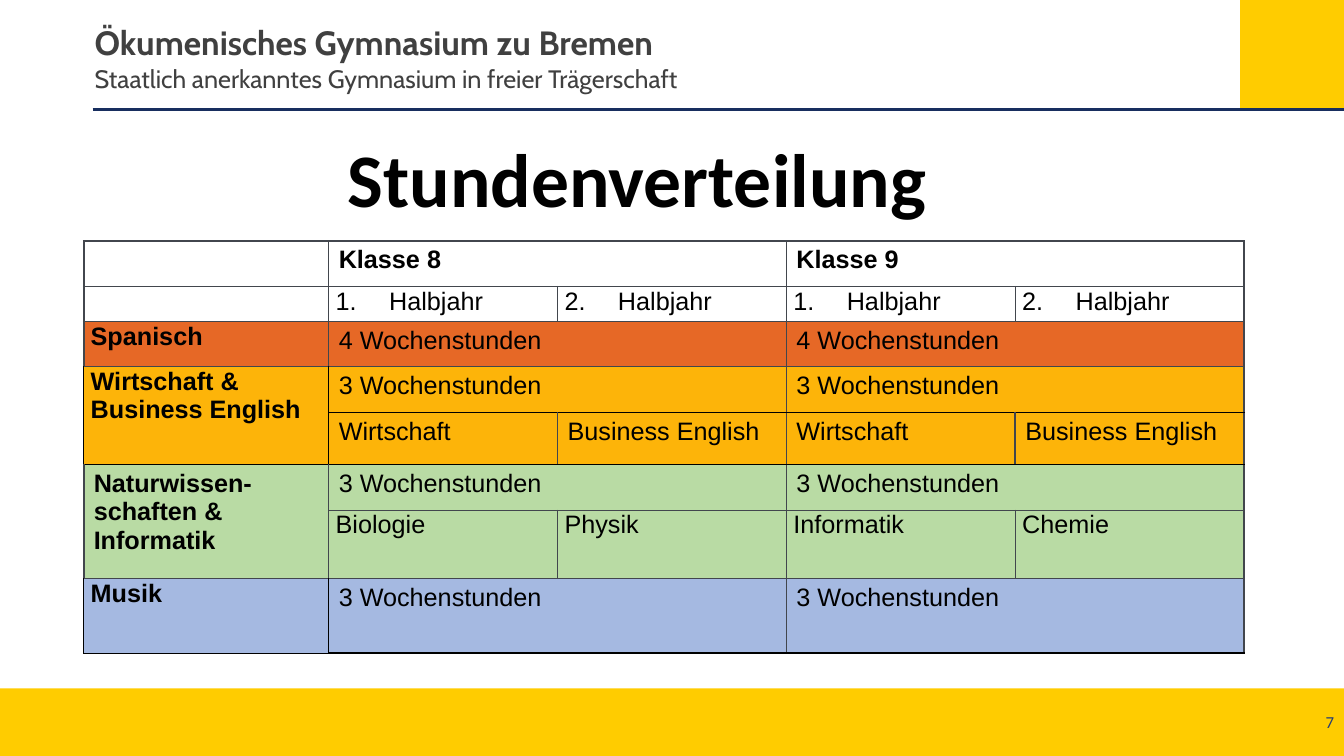
from dataclasses import dataclass
from typing import NamedTuple

from lxml import etree
from pptx import Presentation
from pptx.dml.color import RGBColor
from pptx.enum.shapes import MSO_CONNECTOR, MSO_SHAPE
from pptx.enum.text import MSO_ANCHOR, PP_ALIGN
from pptx.oxml.ns import qn
from pptx.util import Inches, Pt

RECT = MSO_SHAPE.RECTANGLE
LINE = MSO_CONNECTOR.STRAIGHT
TOP, MIDDLE, BOTTOM = MSO_ANCHOR.TOP, MSO_ANCHOR.MIDDLE, MSO_ANCHOR.BOTTOM
LEFT, RIGHT, CENTER = PP_ALIGN.LEFT, PP_ALIGN.RIGHT, PP_ALIGN.CENTER


@dataclass(frozen=True)
class Theme:
    gold: str = "FFCC00"
    navy: str = "182E5F"
    page: str = "253D75"
    head: str = "404040"
    black: str = "000000"
    edge: str = "42464D"
    orange: str = "E66826"
    amber: str = "FDB409"
    green: str = "B9DBA4"
    blue: str = "A5B9E1"
    small: float = 12
    body: float = 18
    school: float = 24
    title: float = 54
    thin: float = 0.75
    thick: float = 1.5
    rule: float = 2.25


THEME = Theme()


class Style(NamedTuple):
    font: str
    size: float
    color: str
    bold: bool = False


class Box(NamedTuple):
    left: float
    top: float
    width: float
    height: float


class Edge(NamedTuple):
    color: str
    width: float


class Row(NamedTuple):
    height: float
    fill: str
    label: str | None
    cells: list[str]
    bold: bool = False
    tight: bool = False
    snug: bool = True


PLAIN = Style("Arial", THEME.body, THEME.black)
STRONG = PLAIN._replace(bold=True)
GRID = Box(0.83, 2.39, 11.51, 4.09)
COLS = [2.43] + [2.27] * 4
TAB = 0.53
THREE = ["3 Wochenstunden"] * 2
ROWS = [
    Row(0.45, "", "", ["Klasse 8", "Klasse 9"], bold=True),
    Row(0.35, "", "", ["1.\tHalbjahr", "2.\tHalbjahr"] * 2, tight=True),
    Row(0.45, THEME.orange, "Spanisch", ["4 Wochenstunden"] * 2),
    Row(0.45, THEME.amber, "Wirtschaft &\nBusiness English", THREE),
    Row(0.52, THEME.amber, None, ["Wirtschaft", "Business English"] * 2),
    Row(0.45, THEME.green, "Naturwissen-schaften & Informatik", THREE, snug=False),
    Row(0.68, THEME.green, None, ["Biologie", "Physik", "Informatik", "Chemie"], tight=True),
    Row(0.74, THEME.blue, "Musik", THREE),
]


def tint(color: str) -> RGBColor:
    return RGBColor.from_string(color)


def write(para, text: str, style: Style) -> None:
    run = para.add_run()
    run.text = text
    run.font.name = style.font
    run.font.size = Pt(style.size)
    run.font.bold = style.bold
    run.font.color.rgb = tint(style.color)


def add_block(slide, box: Box):
    shape = slide.shapes.add_shape(RECT, *map(Inches, box))
    shape.shadow.inherit = False
    shape.fill.solid()
    shape.fill.fore_color.rgb = tint(THEME.gold)
    shape.line.fill.background()
    return shape


def add_text(slide, box: Box, anchor, wrap: bool):
    frame = slide.shapes.add_textbox(*map(Inches, box)).text_frame
    frame.word_wrap = wrap
    frame.vertical_anchor = anchor
    return frame


def add_frame(slide) -> None:
    add_block(slide, Box(12.3, 0, 1.03, 1.09))
    foot = add_block(slide, Box(0, 6.83, 13.33, 0.67)).text_frame
    foot.vertical_anchor = MIDDLE
    foot.paragraphs[0].alignment = RIGHT
    write(foot.paragraphs[0], "7", Style("Calibri", THEME.small, THEME.page))

    rule = slide.shapes.add_connector(
        LINE, Inches(0.92), Inches(1.09), Inches(13.33), Inches(1.09)
    )
    rule.line.color.rgb = tint(THEME.navy)
    rule.line.width = Pt(THEME.rule)
    etree.SubElement(rule._element.spPr, qn("a:effectLst"))

    head = add_text(slide, Box(0.84, 0.35, 6.65, 0.61), TOP, False)
    first, second = head.paragraphs[0], head.add_paragraph()
    first.line_spacing, second.line_spacing = Pt(16), Pt(22)
    write(first, "Ökumenisches Gymnasium zu Bremen",
          Style("Cabin", THEME.school, THEME.head, True))
    write(second, "Staatlich anerkanntes Gymnasium in freier Trägerschaft",
          Style("Cabin", THEME.body, THEME.head))


def add_title(slide) -> None:
    para = add_text(slide, Box(3, 1.25, 6.64, 1.02), BOTTOM, True).paragraphs[0]
    para.alignment = CENTER
    para.line_spacing = 0.9
    para.space_after = Pt(6)
    write(para, "Stundenverteilung", Style("Calibri", THEME.title, THEME.black, True))


def side_edge(row: int, pos: int) -> Edge:
    if pos <= 1 and row in (3, 4, 7):
        return Edge(THEME.black, THEME.thin)
    thick = pos in (0, len(COLS)) or (row, pos) == (4, 4)
    return Edge(THEME.edge, THEME.thick if thick else THEME.thin)


def flat_edge(pos: int, col: int) -> Edge:
    last = len(ROWS)
    thick = pos == 0 or (pos == last and col > 0)
    color = THEME.black if pos in (4, 5, last) else THEME.edge
    return Edge(color, THEME.thick if thick else THEME.thin)


def draw_edge(cell, side: str, edge: Edge) -> None:
    line = etree.SubElement(cell._tc.get_or_add_tcPr(), qn(f"a:ln{side}"),
                            w=str(Pt(edge.width)))
    fill = etree.SubElement(line, qn("a:solidFill"))
    etree.SubElement(fill, qn("a:srgbClr"), val=edge.color)


def set_tab(para) -> None:
    stops = etree.SubElement(para._p.get_or_add_pPr(), qn("a:tabLst"))
    etree.SubElement(stops, qn("a:tab"), pos=str(Inches(TAB)), algn="l")


def fill_cell(table, row: int, col: int, high: int, wide: int,
              text: str, style: Style, tight: bool) -> None:
    cell = table.cell(row, col)
    if high * wide > 1:
        cell.merge(table.cell(row + high - 1, col + wide - 1))
    draw_edge(cell, "L", side_edge(row, col))
    draw_edge(cell, "R", side_edge(row, col + wide))
    draw_edge(cell, "T", flat_edge(row, col))
    draw_edge(cell, "B", flat_edge(row + high, col))
    if ROWS[row].fill:
        cell.fill.solid()
        cell.fill.fore_color.rgb = tint(ROWS[row].fill)
    else:
        cell.fill.background()
    cell.margin_left = cell.margin_right = Inches(0.07 if tight else 0.1)
    cell.margin_top = Inches(0.01 if tight else 0.05)
    cell.margin_bottom = Inches(0 if tight else 0.05)
    cell.vertical_anchor = TOP
    frame = cell.text_frame
    for num, part in enumerate(text.split("\n")):
        para = frame.add_paragraph() if num else frame.paragraphs[0]
        para.alignment = LEFT
        if "\t" in part:
            set_tab(para)
        if part:
            write(para, part, style)


def add_grid(slide) -> None:
    table = slide.shapes.add_table(len(ROWS), len(COLS), *map(Inches, GRID)).table
    table.first_row = table.horz_banding = False
    for col, width in enumerate(COLS):
        table.columns[col].width = Inches(width)
    for num, row in enumerate(ROWS):
        table.rows[num].height = Inches(row.height)
        if row.label is not None:
            joined = num + 1 < len(ROWS) and ROWS[num + 1].label is None
            fill_cell(table, num, 0, 2 if joined else 1, 1, row.label, STRONG, row.snug)
        wide = 4 // len(row.cells)
        for pos, text in enumerate(row.cells):
            fill_cell(table, num, 1 + pos * wide, 1, wide, text,
                      STRONG if row.bold else PLAIN, row.tight)


def main() -> None:
    deck = Presentation()
    deck.slide_width, deck.slide_height = Inches(13.33), Inches(7.5)
    slide = deck.slides.add_slide(deck.slide_layouts[6])
    add_frame(slide)
    add_title(slide)
    add_grid(slide)
    deck.save("out.pptx")


if __name__ == "__main__":
    main()
